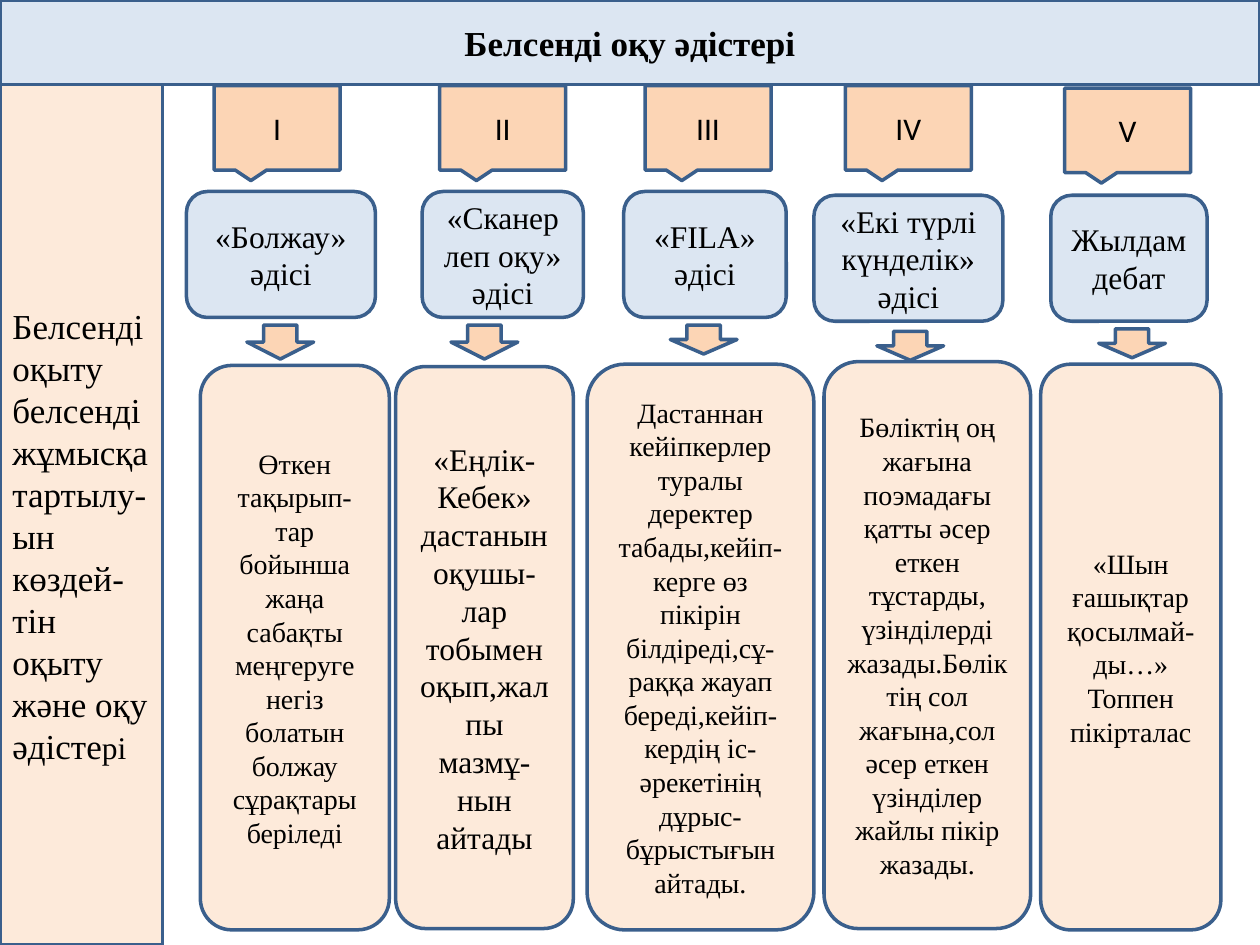
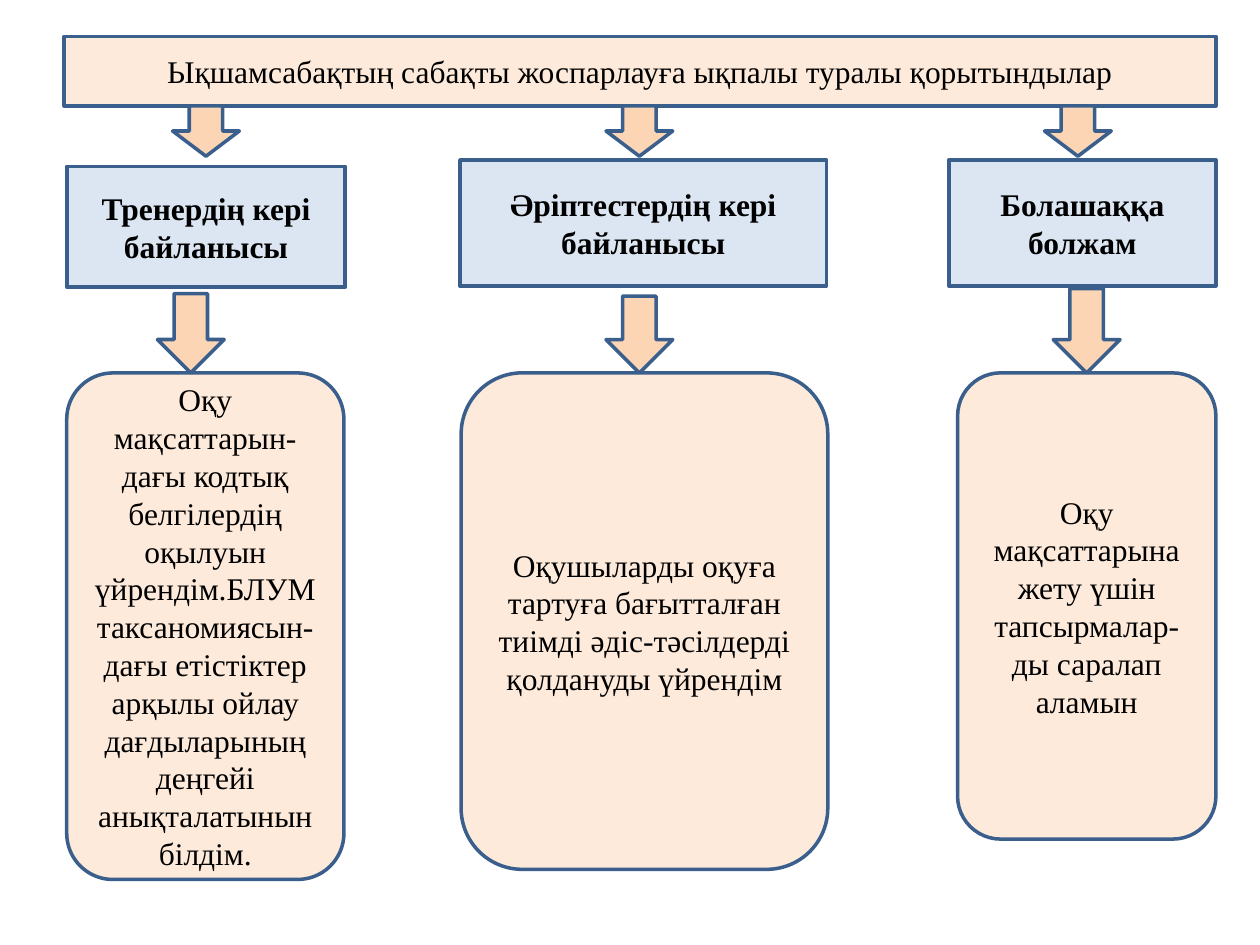
"""Build two slides of flow charts about active learning methods."""
from dataclasses import dataclass

import pptx
import pptx.dml.color
import pptx.enum.shapes
import pptx.enum.text
import pptx.util

RGBColor = pptx.dml.color.RGBColor
Kind = pptx.enum.shapes.MSO_SHAPE
Align = pptx.enum.text.PP_ALIGN

BLUE = RGBColor(0xDC, 0xE6, 0xF2)
CREAM = RGBColor(0xFD, 0xEA, 0xDA)
PEACH = RGBColor(0xFC, 0xD5, 0xB5)
OUTLINE = RGBColor(0x3A, 0x5F, 0x8C)
BLACK = RGBColor(0, 0, 0)

SERIF = "Times New Roman"
SANS = "Calibri"

SLIDE_WIDTH = pptx.util.Inches(10)
SLIDE_HEIGHT = pptx.util.Inches(7.5)
COLUMNS = 100
ROWS = 75
TITLE_ONLY = 5
ARROW_WIDTH = 5.3


@dataclass(frozen=True)
class Area:
    """A rectangle in grid columns and rows."""
    left: float
    top: float
    width: float
    height: float


@dataclass(frozen=True)
class Method:
    """One learning method: numeral callout, name, arrow and description."""
    numeral: str
    callout: Area
    name: str
    name_area: Area
    arrow: Area
    description: str
    description_area: Area
    size: int = 16


@dataclass(frozen=True)
class Conclusion:
    """One conclusion: arrow, heading, second arrow and finding."""
    first_arrow: Area
    heading: str
    heading_kind: Kind
    heading_area: Area
    second_arrow: Area
    finding: str
    finding_area: Area


def callout_area(left: float, top: float = 6.8) -> Area:
    """Return the area of a numeral callout."""
    return Area(left, top, 10, 6.7)


def arrow_area(left: float, top: float, height: float) -> Area:
    """Return the area of a down arrow."""
    return Area(left, top, ARROW_WIDTH, height)


METHODS = [
    Method("I", callout_area(17),
           "«Болжау» әдісі", Area(14.8, 15.2, 15, 10),
           arrow_area(19.6, 25.8, 2.7),
           "Өткен тақырып-тар бойынша жаңа сабақты меңгеруге негіз "
           "болатын болжау сұрақтары беріледі",
           Area(15.9, 29, 15, 44.8)),
    Method("II", callout_area(34.9),
           "«Сканерлеп оқу» әдісі", Area(33.5, 15.2, 12.8, 10),
           arrow_area(35.8, 25.8, 2.7),
           "«Еңлік-Кебек» дастаныноқушы-лар тобымен оқып,жалпы "
           "мазмұ-нын айтады",
           Area(31.4, 29.1, 14.1, 44.6), size=18),
    Method("III", callout_area(51.2),
           "«FILA»\nәдісі", Area(49.5, 15.2, 12.9, 10),
           arrow_area(53.2, 25.8, 2.3),
           "Дастаннан кейіпкерлер туралы деректер табады,кейіп-керге "
           "өз пікірін білдіреді,сұ-\nраққа жауап береді,кейіп-кердің "
           "іс-әрекетінің дұрыс-бұрыстығын айтады.",
           Area(46.6, 28.9, 18, 44.9)),
    Method("IV", callout_area(67.1),
           "«Екі түрлі күнделік» әдісі", Area(64.6, 15.5, 15, 10),
           arrow_area(69.6, 26.3, 2.3),
           "Бөліктің оң жағына поэмадағы қатты әсер еткен тұстарды, "
           "үзінділерді жазады.Бөліктің сол жағына,сол әсер еткен "
           "үзінділер жайлы пікір жазады.",
           Area(65.4, 28.7, 16.4, 45)),
    Method("V", callout_area(84.5, 7),
           "Жылдамдебат", Area(83.4, 15.5, 12.4, 10),
           arrow_area(87.2, 26.1, 2.3),
           "«Шын ғашықтар қосылмай-\nды…» Топпен пікірталас",
           Area(82.6, 28.9, 14.3, 44.9)),
]

CONCLUSIONS = [
    Conclusion(arrow_area(13.7, 8.4, 4),
               "Тренердің кері байланысы", Kind.FLOWCHART_PROCESS,
               Area(5.3, 13.2, 22.1, 9.6), arrow_area(12.5, 23.3, 6.3),
               "Оқу мақсаттарын-дағы кодтық белгілердің оқылуын "
               "үйрендім.БЛУМ таксаномиясын-дағы етістіктер арқылы ойлау "
               "дағдыларының деңгейі анықталатынын білдім.",
               Area(5.3, 29.6, 22, 40.2)),
    Conclusion(arrow_area(48.1, 8.4, 4),
               "Әріптестердің кері байланысы", Kind.RECTANGLE,
               Area(36.5, 12.7, 29.1, 10), arrow_area(48.1, 23.5, 6.1),
               "Оқушыларды оқуға тартуға бағытталған тиімді "
               "әдіс-тәсілдерді қолдануды үйрендім",
               Area(36.6, 29.6, 29.1, 39.4)),
    Conclusion(arrow_area(82.9, 8.4, 4),
               "Болашаққа болжам", Kind.RECTANGLE,
               Area(75.3, 12.7, 21.2, 10), arrow_area(83.6, 22.9, 6.7),
               "Оқу мақсаттарына жету үшін тапсырмалар-ды саралап аламын",
               Area(76, 29.6, 20.5, 37)),
]


def across(columns: float) -> int:
    """Turn grid columns into a length."""
    return round(SLIDE_WIDTH * columns / COLUMNS)


def down(rows: float) -> int:
    """Turn grid rows into a length."""
    return round(SLIDE_HEIGHT * rows / ROWS)


def add_span(para, text: str, *, size: float, font: str = SERIF,
             bold: bool = False) -> None:
    """Add one formatted span to a paragraph."""
    span = para.add_run()
    span.text = text
    span.font.size = pptx.util.Pt(size)
    span.font.name = font
    span.font.bold = bold
    span.font.color.rgb = BLACK


def write_text(box, text: str, *, align: Align = Align.CENTER,
               **span_format) -> None:
    """Write text into a box, one paragraph a line."""
    frame = box.text_frame
    frame.word_wrap = True
    frame.auto_size = pptx.enum.text.MSO_AUTO_SIZE.NONE
    frame.vertical_anchor = pptx.enum.text.MSO_ANCHOR.MIDDLE
    for index, line in enumerate(text.split("\n")):
        para = frame.add_paragraph() if index else frame.paragraphs[0]
        para.alignment = align
        add_span(para, line, **span_format)


def paint(box, fill: RGBColor) -> None:
    """Give a box its fill and the shared outline."""
    box.fill.solid()
    box.fill.fore_color.rgb = fill
    box.line.color.rgb = OUTLINE
    box.line.width = pptx.util.Pt(2)


def add_box(page, kind: Kind, area: Area, fill: RGBColor):
    """Add a painted shape without a shadow."""
    box = page.shapes.add_shape(kind, across(area.left), down(area.top),
                                across(area.width), down(area.height))
    box.shadow.inherit = False
    paint(box, fill)
    return box


def add_page(deck, title: str, area: Area, fill: RGBColor, **span_format):
    """Add a page whose title placeholder is a coloured band."""
    page = deck.slides.add_slide(deck.slide_layouts[TITLE_ONLY])
    band = page.shapes.title
    band.left, band.top = across(area.left), down(area.top)
    band.width, band.height = across(area.width), down(area.height)
    paint(band, fill)
    write_text(band, title, **span_format)
    return page


def add_method(page, method: Method) -> None:
    """Draw one column of the methods page."""
    callout = add_box(page, Kind.RECTANGULAR_CALLOUT, method.callout, PEACH)
    write_text(callout, method.numeral, size=18, font=SANS)
    name = add_box(page, Kind.ROUNDED_RECTANGLE, method.name_area, BLUE)
    write_text(name, method.name, size=18)
    description = add_box(page, Kind.ROUNDED_RECTANGLE,
                          method.description_area, CREAM)
    write_text(description, method.description, size=method.size)
    add_box(page, Kind.DOWN_ARROW, method.arrow, PEACH)


def add_conclusion(page, conclusion: Conclusion) -> None:
    """Draw one column of the conclusions page."""
    heading = add_box(page, conclusion.heading_kind,
                      conclusion.heading_area, BLUE)
    write_text(heading, conclusion.heading, size=18, bold=True)
    finding = add_box(page, Kind.ROUNDED_RECTANGLE,
                      conclusion.finding_area, CREAM)
    write_text(finding, conclusion.finding, size=18)
    for arrow in (conclusion.first_arrow, conclusion.second_arrow):
        add_box(page, Kind.DOWN_ARROW, arrow, PEACH)


def build_methods_page(deck) -> None:
    """Build the page of the five methods."""
    page = add_page(deck, "Белсенді оқу әдістері", Area(0, 0, 100, 6.7),
                    BLUE, size=20, bold=True)
    sidebar = add_box(page, Kind.RECTANGLE, Area(0, 6.7, 12.9, 68.3), CREAM)
    write_text(sidebar, " Белсенді оқыту белсенді жұмысқа тартылу-ын "
               "көздей-тін оқыту және оқу әдісте",
               align=Align.LEFT, size=20)
    add_span(sidebar.text_frame.paragraphs[0], "рі", size=18)
    for method in METHODS:
        add_method(page, method)


def build_conclusions_page(deck) -> None:
    """Build the page of the three conclusions."""
    page = add_page(deck, "Ықшамсабақтың сабақты жоспарлауға ықпалы туралы "
                    "қорытындылар", Area(5.1, 2.9, 91.4, 5.5),
                    CREAM, size=18)
    for conclusion in CONCLUSIONS:
        add_conclusion(page, conclusion)


def main() -> None:
    """Build and save the deck."""
    deck = pptx.Presentation()
    deck.slide_width = SLIDE_WIDTH
    deck.slide_height = SLIDE_HEIGHT
    build_methods_page(deck)
    build_conclusions_page(deck)
    deck.save("out.pptx")


if __name__ == "__main__":
    main()
